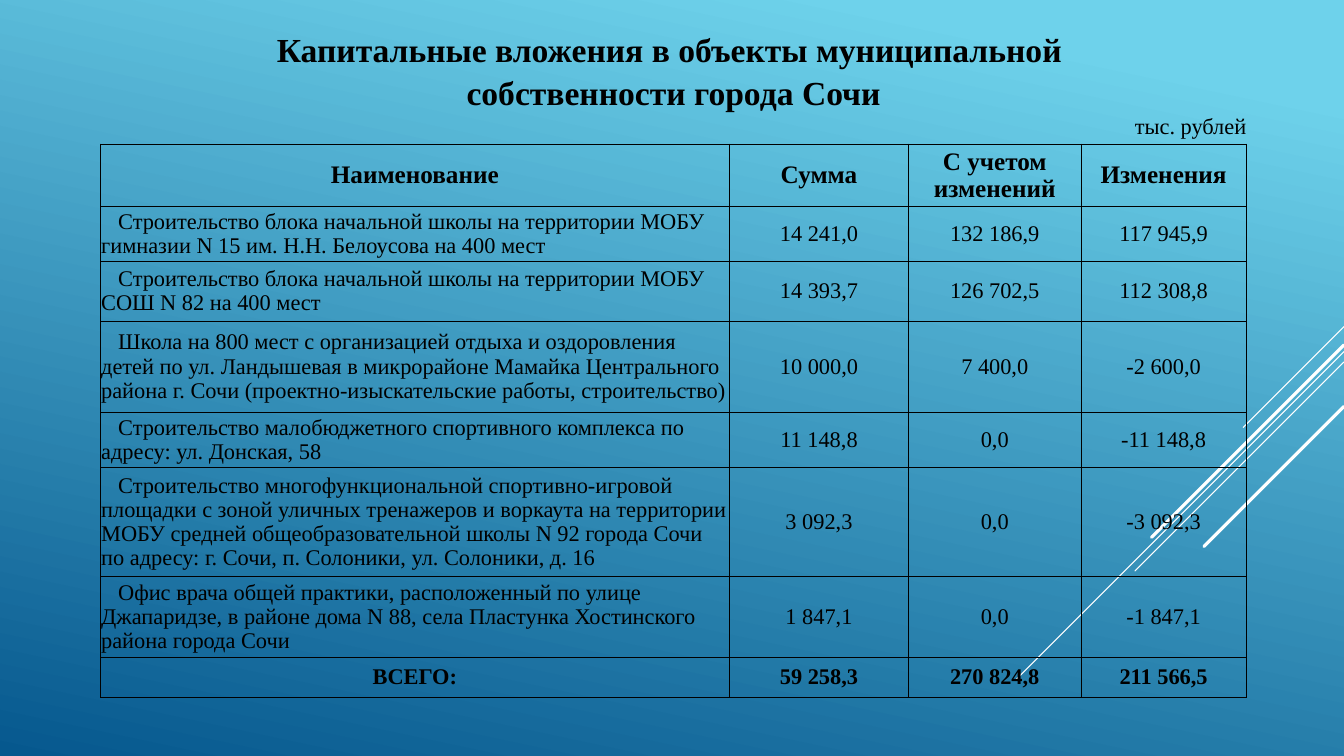
from lxml.etree import SubElement
from pptx import Presentation
from pptx.dml.color import RGBColor
from pptx.enum.shapes import MSO_CONNECTOR as Connector
from pptx.enum.text import MSO_ANCHOR as Anchor, PP_ALIGN as Align
from pptx.oxml.ns import qn
from pptx.util import Cm, Pt

FONT = "Times New Roman"
BLACK = "000000"
WHITE = "FFFFFF"
SLIDE_WIDTH, SLIDE_HEIGHT = 33.87, 19.05

HEADERS = ["Наименование", "Сумма", "С учетом изменений", "Изменения"]
PROJECTS = [
    ["Строительство блока начальной школы на территории МОБУ гимназии N 15 им. Н.Н. Белоусова на 400 мест",
     "14 241,0", "132 186,9", "117 945,9"],
    ["Строительство блока начальной школы на территории МОБУ СОШ N 82 на 400 мест",
     "14 393,7", "126 702,5", "112 308,8"],
    ["Школа на 800 мест с организацией отдыха и оздоровления детей по ул. Ландышевая в микрорайоне Мамайка "
     "Центрального района г. Сочи (проектно-изыскательские работы, строительство)",
     "10 000,0", "7 400,0", "-2 600,0"],
    ["Строительство малобюджетного спортивного комплекса по адресу: ул. Донская, 58",
     "11 148,8", "0,0", "-11 148,8"],
    ["Строительство многофункциональной спортивно-игровой площадки с зоной уличных тренажеров и воркаута "
     "на территории МОБУ средней общеобразовательной школы N 92 города Сочи по адресу: г. Сочи, п. Солоники, "
     "ул. Солоники, д. 16",
     "3 092,3", "0,0", "-3 092,3"],
    ["Офис врача общей практики, расположенный по улице Джапаридзе, в районе дома N 88, села Пластунка "
     "Хостинского района города Сочи",
     "1 847,1", "0,0", "-1 847,1"],
]
TOTALS = ["ВСЕГО:", "59 258,3", "270 824,8", "211 566,5"]
COLUMN_WIDTHS = [15.85, 4.52, 4.34, 4.17]
ROW_HEIGHTS = [1.56, 1.39, 1.51, 2.29, 1.39, 2.75, 2.04, 1.01]
RAYS = [(8.23, 2.54, 0.75), (8.86, 8.28, 0.75), (9.12, 5.27, 0.75),
        (8.69, 4.85, 2.25), (10.24, 3.53, 2.25)]


def color(value):
    return RGBColor.from_string(value)


def write(frame, text, size=16, bold=False, align=Align.LEFT, spacing=1.0, indent=0):
    frame.word_wrap = True
    for index, line in enumerate(text.split("\n")):
        paragraph = frame.add_paragraph() if index else frame.paragraphs[0]
        paragraph.alignment = align
        paragraph.line_spacing = spacing
        if indent:
            properties = paragraph._p.get_or_add_pPr()
            properties.set("marL", "0")
            properties.set("indent", str(Cm(indent)))
        run = paragraph.add_run()
        run.text = line
        run.font.name = FONT
        run.font.size = Pt(size)
        run.font.bold = bold
        run.font.color.rgb = color(BLACK)


def add_text(slide, box, text, **text_format):
    shape = slide.shapes.add_textbox(*map(Cm, box))
    write(shape.text_frame, text, **text_format)


def paint_background(slide):
    fill = slide.background.fill
    fill.gradient()
    fill.gradient_angle = 258
    for stop, position, value in zip(fill.gradient_stops, (0.1, 1), ("6ED2EB", "06588E")):
        stop.position = position
        stop.color.rgb = color(value)


def add_rays(slide, right):
    for top, reach, width in RAYS:
        ray = slide.shapes.add_connector(
            Connector.STRAIGHT, Cm(right), Cm(top), Cm(right - reach), Cm(top + reach))
        ray.line.color.rgb = color(WHITE)
        ray.line.width = Pt(width)
        ray.line._ln.set("cap", "rnd")
        SubElement(ray._element.spPr, qn("a:effectLst"))


def add_borders(cell):
    properties = cell._tc.get_or_add_tcPr()
    for side in ("lnL", "lnR", "lnT", "lnB"):
        border = SubElement(properties, qn(f"a:{side}"), w=str(Pt(0.5)))
        fill = SubElement(border, qn("a:solidFill"))
        SubElement(fill, qn("a:srgbClr"), val=BLACK)


def fill_cell(cell, text, **text_format):
    add_borders(cell)
    cell.fill.background()
    cell.vertical_anchor = Anchor.MIDDLE
    cell.margin_left = cell.margin_right = cell.margin_top = Cm(0.02)
    cell.margin_bottom = 0
    write(cell.text_frame, text, spacing=0.97, **text_format)


def add_investments(slide, left, top):
    rows = [HEADERS, *PROJECTS, TOTALS]
    table = slide.shapes.add_table(
        len(rows), len(HEADERS), Cm(left), Cm(top),
        Cm(sum(COLUMN_WIDTHS)), Cm(sum(ROW_HEIGHTS))).table
    table.first_row = table.horz_banding = False
    for column, width in zip(table.columns, COLUMN_WIDTHS):
        column.width = Cm(width)
    for row, height, values in zip(table.rows, ROW_HEIGHTS, rows):
        row.height = Cm(height)
        emphasized = values in (HEADERS, TOTALS)
        for index, (cell, text) in enumerate(zip(row.cells, values)):
            is_name = index == 0 and not emphasized
            fill_cell(cell, text, bold=emphasized,
                      size=18 if values is HEADERS else 16,
                      align=Align.LEFT if is_name else Align.CENTER,
                      indent=0.43 if is_name else 0)


def build_slide(presentation):
    slide = presentation.slides.add_slide(presentation.slide_layouts[6])
    paint_background(slide)
    add_rays(slide, SLIDE_WIDTH)
    add_text(slide, (3.07, 0.56, 27.81, 2.31),
             "Капитальные вложения в объекты муниципальной \nсобственности города Сочи",
             size=24, bold=True, align=Align.CENTER, spacing=1.05)
    add_text(slide, (28.35, 2.69, 4.19, 0.94), "тыс. рублей")
    add_investments(slide, 2.53, 3.63)


def main():
    presentation = Presentation()
    presentation.slide_width = Cm(SLIDE_WIDTH)
    presentation.slide_height = Cm(SLIDE_HEIGHT)
    build_slide(presentation)
    presentation.save("out.pptx")


if __name__ == "__main__":
    main()
